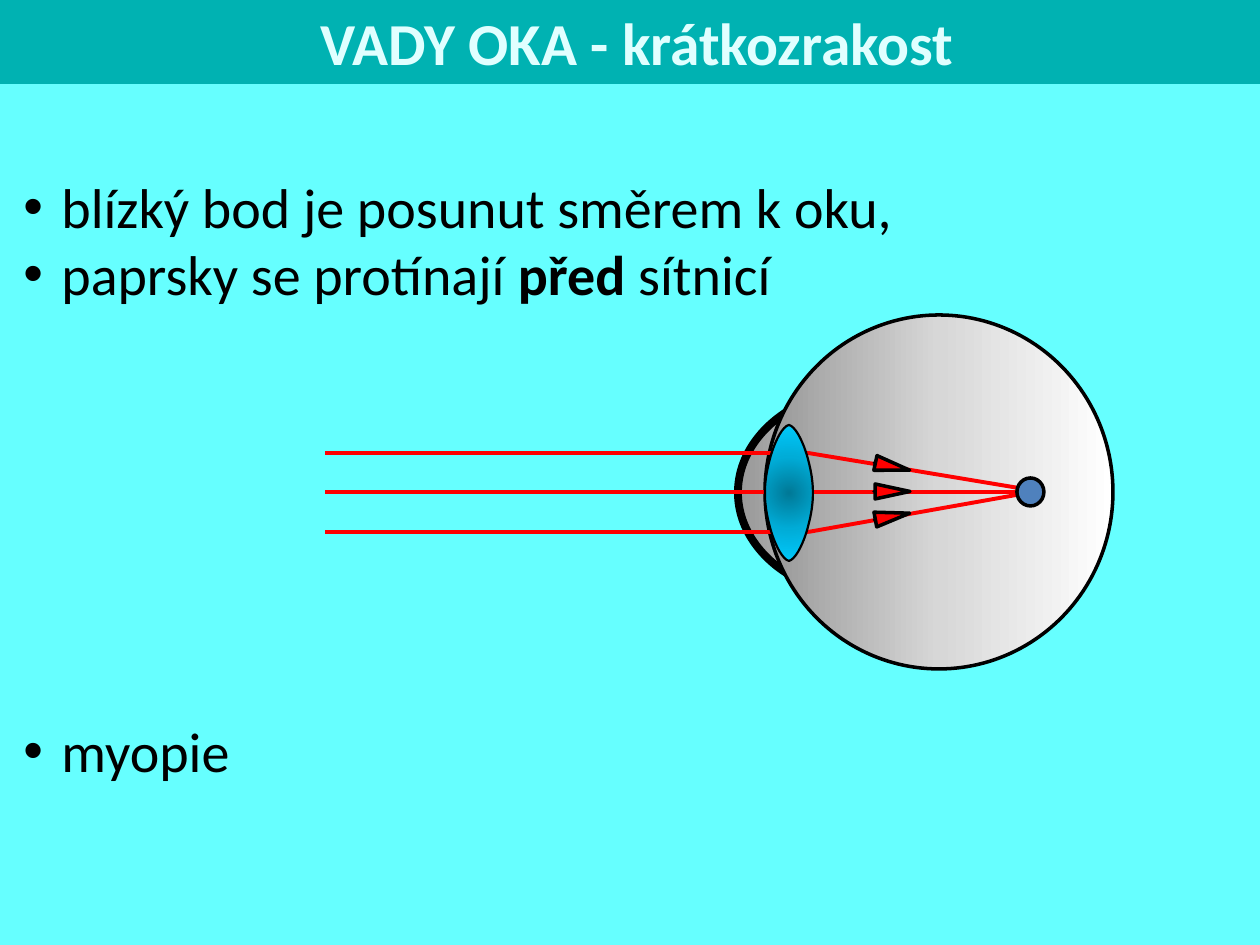
import pptx
import pptx.util
import pptx.dml.color
import pptx.enum.shapes
import pptx.enum.text
import pptx.oxml
import pptx.oxml.ns

SCALE = 914400 / 126
FONT = "Calibri"
COLORS = {
    "back": "66FFFF", "bar": "00B2B2", "title": "E0FFFF", "ink": "000000",
    "ray": "FF0000", "focus": "4F81BD",
}
EYE = [(0, "979797"), (50, "D7D7D7"), (100, "FFFFFF")]
LENS = [(0, "007997"), (50, "00ACD7"), (100, "00CCFF")]
LINEAR = '<a:lin ang="0" scaled="1"/>'
RADIAL = ('<a:path path="circle"><a:fillToRect l="50000" t="50000" '
          'r="50000" b="50000"/></a:path>')
KIND = pptx.enum.shapes.MSO_SHAPE


def px(num):
    return round(num * SCALE)


def color(name):
    return pptx.dml.color.RGBColor.from_string(COLORS[name])


def curve(a, b, c, d, steps=10):
    """Points on a cubic curve, without its start."""
    for i in range(1, steps + 1):
        t = i / steps
        u = 1 - t
        yield tuple(u**3 * p + 3 * u * u * t * q + 3 * u * t * t * r + t**3 * s
                    for p, q, r, s in zip(a, b, c, d))


class Deck:
    def __init__(self, wide, high):
        self.prs = pptx.Presentation()
        self.prs.slide_width, self.prs.slide_height = px(wide), px(high)
        self.slide = self.prs.slides.add_slide(self.prs.slide_layouts[6])
        fill = self.slide.background.fill
        fill.solid()
        fill.fore_color.rgb = color("back")

    def paint(self, shape, fill, edge):
        shape.shadow.inherit = False
        if isinstance(fill, str):
            shape.fill.solid()
            shape.fill.fore_color.rgb = color(fill)
        else:
            stops, mode = fill
            marks = "".join(f'<a:gs pos="{pos * 1000}"><a:srgbClr val="{tone}"/></a:gs>'
                            for pos, tone in stops)
            grad = pptx.oxml.parse_xml(
                f'<a:gradFill {pptx.oxml.ns.nsdecls("a")} rotWithShape="1">'
                f'<a:gsLst>{marks}</a:gsLst>{mode}</a:gradFill>')
            shape.fill.background()
            props = shape._element.spPr
            props.replace(props.find(pptx.oxml.ns.qn("a:noFill")), grad)
        if edge:
            shape.line.color.rgb = color("ink")
            shape.line.width = pptx.util.Pt(edge)
        else:
            shape.line.fill.background()

    def shape(self, kind, box, fill, edge=0, turn=0):
        item = self.slide.shapes.add_shape(kind, *map(px, box))
        item.rotation = turn
        self.paint(item, fill, edge)
        return item

    def arrow(self, box, turn):
        item = self.shape(KIND.RIGHT_ARROW, box, "ray", 2, turn)
        item.adjustments[0], item.adjustments[1] = 0, 2.33

    def line(self, start, end):
        item = self.slide.shapes.add_connector(
            pptx.enum.shapes.MSO_CONNECTOR.STRAIGHT, *map(px, start + end))
        item.line.color.rgb = color("ray")
        item.line.width = pptx.util.Pt(2.25)
        item._element.spPr.append(
            pptx.oxml.parse_xml(f'<a:effectLst {pptx.oxml.ns.nsdecls("a")}/>'))

    def free(self, points, fill, edge):
        spots = [(px(x), px(y)) for x, y in points]
        form = self.slide.shapes.build_freeform(*spots[0], scale=1.0)
        form.add_line_segments(spots[1:], close=True)
        self.paint(form.convert_to_shape(), fill, edge)

    def run(self, para, text, size, tone, bold=False):
        run = para.add_run()
        run.text = text
        run.font.name, run.font.size = FONT, pptx.util.Pt(size)
        run.font.bold = bold
        run.font.color.rgb = color(tone)

    def title(self, box, text):
        frame = self.shape(KIND.RECTANGLE, box, "bar").text_frame
        frame.word_wrap = True
        frame.vertical_anchor = pptx.enum.text.MSO_ANCHOR.MIDDLE
        para = frame.paragraphs[0]
        para.alignment = pptx.enum.text.PP_ALIGN.CENTER
        para._p.get_or_add_pPr().set("marL", str(px(14)))
        self.run(para, text, 34, "title", True)

    def bullets(self, box, items):
        frame = self.slide.shapes.add_textbox(*map(px, box)).text_frame
        frame.word_wrap = True
        for i, (gap, runs) in enumerate(items):
            para = frame.add_paragraph() if i else frame.paragraphs[0]
            para.space_before = pptx.util.Pt(gap)
            props = para._p.get_or_add_pPr()
            props.set("marL", str(px(49)))
            props.set("indent", str(px(-38)))
            for tag in ('buFont typeface="Arial"', 'buChar char="•"'):
                props.append(pptx.oxml.parse_xml(
                    f'<a:{tag} {pptx.oxml.ns.nsdecls("a")}/>'))
            for text, bold in runs:
                self.run(para, text, 32, "ink", bold)


def main():
    deck = Deck(1260, 945)

    # Title and text
    deck.title((0, 0, 1260, 84), "VADY OKA - krátkozrakost")
    deck.bullets((0, 166, 1260, 624), [
        (0, [("blízký bod je posunut směrem k oku,", False)]),
        (0, [("paprsky se protínají ", False), ("před", True), (" sítnicí", False)]),
        (234, [("myopie", False)]),
    ])

    # Cornea and eyeball
    deck.shape(KIND.OVAL, (738, 388, 267, 209), (EYE, LINEAR), 4.5)
    deck.shape(KIND.OVAL, (765, 315, 348, 354), (EYE, LINEAR), 2)

    # Rays bent towards the focus
    rays = (453, 492, 532)
    for y, end in zip(rays, (1043, 1033, 1033)):
        deck.line((808, y), (end, 492))
    for y, turn in zip((459, 484, 509), (12, 0, 349.5)):
        deck.arrow((874, y, 36, 15), turn)
    deck.shape(KIND.OVAL, (1017, 478, 27, 28), "focus", 2)

    # Incoming rays
    for y in rays:
        deck.line((808, y), (325, y))

    # Lens, mirrored from one quarter
    part = [(0, -68), *curve((0, -68), (8, -66), (16, -46), (19, -34)),
            *curve((19, -34), (22, -23), (24, -12), (24, 0))]
    half = part + [(x, -y) for x, y in part[-2::-1]]
    ring = half + [(-x, y) for x, y in half[-2:0:-1]]
    deck.free([(789 + x, 493 + y) for x, y in ring], (LENS, RADIAL), 1.25)

    deck.prs.save("out.pptx")


if __name__ == "__main__":
    main()
